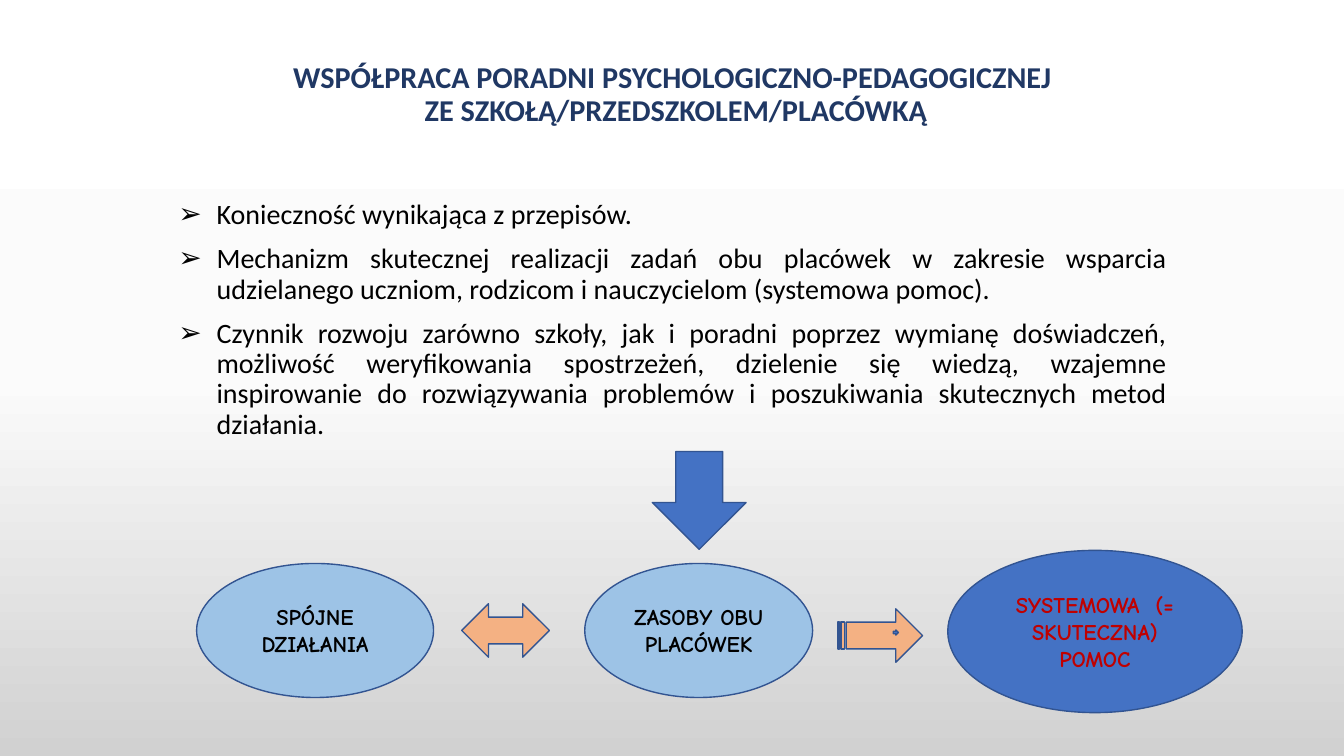
from copy import deepcopy

from lxml import etree
from pptx import Presentation
from pptx.dml import color
from pptx.enum import shapes, text
from pptx.oxml import ns
from pptx.util import Inches, Pt

NAVY = color.RGBColor(0x20, 0x38, 0x64)
BLUE = color.RGBColor(0x44, 0x72, 0xC4)
OUTLINE = color.RGBColor(0x32, 0x54, 0x91)
LIGHT_BLUE = color.RGBColor(0x9D, 0xC3, 0xE6)
ORANGE = color.RGBColor(0xF4, 0xB1, 0x83)
RED = color.RGBColor(0xC0, 0x00, 0x00)
BLACK = color.RGBColor(0x00, 0x00, 0x00)
WHITE = color.RGBColor(0xFF, 0xFF, 0xFF)
OFF_WHITE = color.RGBColor(0xFB, 0xFB, 0xFB)
GREY = color.RGBColor(0xD1, 0xD1, 0xD1)

TITLE = "WSPÓŁPRACA PORADNI PSYCHOLOGICZNO-PEDAGOGICZNEJ\v ZE SZKOŁĄ/PRZEDSZKOLEM/PLACÓWKĄ"
REASONS = [
    "Konieczność wynikająca z przepisów.",
    "Mechanizm skutecznej realizacji zadań obu placówek w zakresie wsparcia "
    "udzielanego uczniom, rodzicom i nauczycielom (systemowa pomoc).",
    "Czynnik rozwoju zarówno szkoły, jak i poradni poprzez wymianę doświadczeń, "
    "możliwość weryfikowania spostrzeżeń, dzielenie się wiedzą, wzajemne "
    "inspirowanie do rozwiązywania problemów i poszukiwania skutecznych metod działania.",
]
SHAPE = shapes.MSO_SHAPE
ARROWS = [
    (SHAPE.DOWN_ARROW, (6.47, 4.48, 0.93, 0.97), BLUE),
    (SHAPE.STRIPED_RIGHT_ARROW, (8.31, 6.04, 0.84, 0.53), ORANGE),
    (SHAPE.LEFT_RIGHT_ARROW, (4.58, 5.99, 0.87, 0.53), ORANGE),
    (SHAPE.RIGHT_ARROW, (8.86, 6.25, 0.05, 0.05), BLUE),
]
ELLIPSES = [
    ("SPÓJNE DZIAŁANIA", (1.95, 5.59, 2.35, 1.33), LIGHT_BLUE, BLACK),
    ("ZASOBY OBU PLACÓWEK", (5.8, 5.59, 2.26, 1.33), LIGHT_BLUE, BLACK),
    ("SYSTEMOWA  (= SKUTECZNA) POMOC", (9.4, 5.46, 2.92, 1.61), BLUE, RED),
]


def format_runs(paragraph, font_name, size, font_color, bold):
    for run in paragraph.runs:
        run.font.name = font_name
        run.font.size = Pt(size)
        run.font.color.rgb = font_color
        run.font.bold = bold


def set_background(slide):
    fill = slide.background.fill
    fill.gradient()
    fill.gradient_angle = 270
    first_stop = next(slide.element.iter(ns.qn("a:gs")))
    first_stop.addnext(deepcopy(first_stop))
    stops = [(0, WHITE), (0.5, OFF_WHITE), (1, GREY)]
    for stop, (position, stop_color) in zip(fill.gradient_stops, stops):
        stop.position = position
        stop.color.rgb = stop_color


def set_title(slide):
    title = slide.shapes.title
    title.left, title.top = Inches(1.67), Inches(0.58)
    title.width, title.height = Inches(10), Inches(1.07)
    frame = title.text_frame
    frame.text = TITLE
    frame.auto_size = text.MSO_AUTO_SIZE.NONE
    frame.vertical_anchor = text.MSO_ANCHOR.BOTTOM
    frame.margin_bottom = Inches(0.38)
    paragraph = frame.paragraphs[0]
    paragraph.alignment = text.PP_ALIGN.CENTER
    paragraph.line_spacing = 0.9
    format_runs(paragraph, "Calibri", 21.6, NAVY, True)


def add_bullet(paragraph):
    properties = paragraph._p.get_or_add_pPr()
    properties.set("marL", str(Inches(0.38)))
    properties.set("indent", str(-Inches(0.38)))
    etree.SubElement(properties, ns.qn("a:buFont")).set("typeface", "Arial")
    etree.SubElement(properties, ns.qn("a:buChar")).set("char", "➢")


def add_reasons(slide):
    box = slide.shapes.add_textbox(Inches(1.67), Inches(1.94), Inches(10), Inches(5.28))
    frame = box.text_frame
    frame.word_wrap = True
    frame.text = "\n".join(REASONS)
    for paragraph in frame.paragraphs:
        paragraph.alignment = text.PP_ALIGN.JUSTIFY
        paragraph.line_spacing = 0.9
        paragraph.space_before = Pt(10)
        add_bullet(paragraph)
        format_runs(paragraph, "Calibri", 20, BLACK, False)


def add_outlined_shape(slide, kind, bounds, fill_color):
    shape = slide.shapes.add_shape(kind, *map(Inches, bounds))
    shape.shadow.inherit = False
    shape.fill.solid()
    shape.fill.fore_color.rgb = fill_color
    shape.line.color.rgb = OUTLINE
    shape.line.width = Pt(1)
    return shape


def add_ellipse(slide, label, bounds, fill_color, font_color):
    frame = add_outlined_shape(slide, SHAPE.OVAL, bounds, fill_color).text_frame
    frame.word_wrap = True
    frame.vertical_anchor = text.MSO_ANCHOR.MIDDLE
    frame.text = label
    paragraph = frame.paragraphs[0]
    paragraph.alignment = text.PP_ALIGN.CENTER
    format_runs(paragraph, "Comic Neue", 16, font_color, True)


def main():
    presentation = Presentation()
    presentation.slide_width = Inches(13.33)
    presentation.slide_height = Inches(7.5)
    slide = presentation.slides.add_slide(presentation.slide_layouts[5])
    set_background(slide)
    set_title(slide)
    add_reasons(slide)
    for ellipse in ELLIPSES:
        add_ellipse(slide, *ellipse)
    for arrow in ARROWS:
        add_outlined_shape(slide, *arrow)
    presentation.save("out.pptx")


if __name__ == "__main__":
    main()
